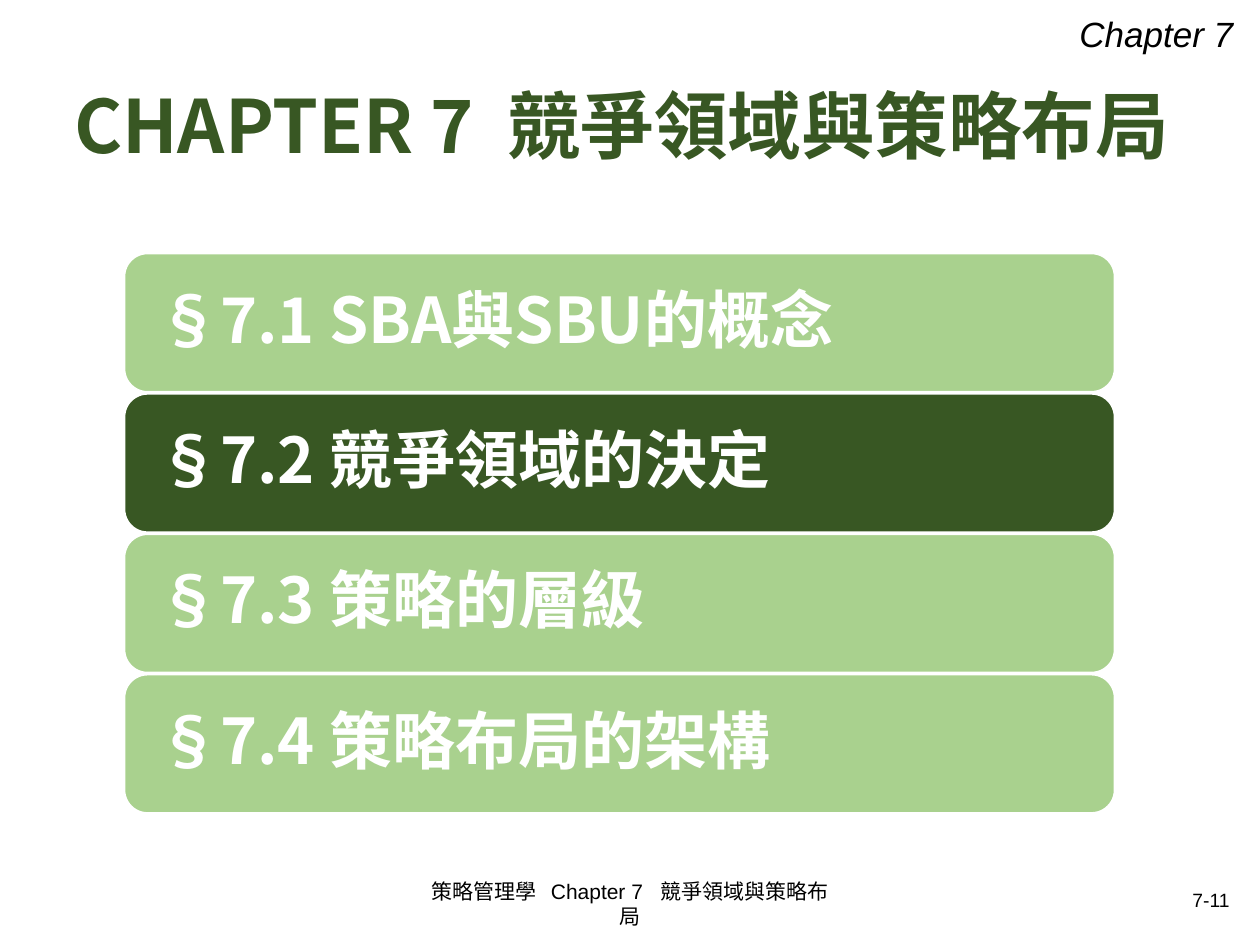
from dataclasses import dataclass

from lxml import etree
from pptx import Presentation
from pptx.dml.color import RGBColor
from pptx.enum.shapes import MSO_SHAPE
from pptx.enum.text import MSO_ANCHOR, MSO_AUTO_SIZE, PP_ALIGN
from pptx.oxml.ns import qn
from pptx.util import Cm, Pt

ROUND = MSO_SHAPE.ROUNDED_RECTANGLE
MID, TOP = MSO_ANCHOR.MIDDLE, MSO_ANCHOR.TOP
LEFT, CENTER, RIGHT = PP_ALIGN.LEFT, PP_ALIGN.CENTER, PP_ALIGN.RIGHT
FIXED, GROW = MSO_AUTO_SIZE.NONE, MSO_AUTO_SIZE.SHAPE_TO_FIT_TEXT


@dataclass(frozen=True)
class Theme:
    dark: RGBColor = RGBColor(0x38, 0x57, 0x23)
    light: RGBColor = RGBColor(0xA9, 0xD1, 0x8E)
    white: RGBColor = RGBColor(0xFF, 0xFF, 0xFF)
    black: RGBColor = RGBColor(0, 0, 0)
    head: str = "Noto Sans CJK SC"
    body: str = "Arial"
    title: int = 42
    item: int = 36
    mark: int = 20
    foot: int = 12
    page: int = 11


THEME = Theme()
TOPICS = ["§7.1 SBA與SBU的概念", "§7.2 競爭領域的決定",
          "§7.3 策略的層級", "§7.4 策略布局的架構"]
ACTIVE = 1


def write(frame, text, size, color, align=LEFT, italic=False):
    para = frame.paragraphs[0]
    para.alignment = align
    run = para.add_run()
    run.text = text
    font = run.font
    font.name, font.size, font.italic = THEME.body, Pt(size), italic
    font.color.rgb = color
    return para, run


def write_head(frame, text, size, color):
    """Bold heading text, with the heading font for Chinese as well."""
    para, run = write(frame, text, size, color)
    para.line_spacing = 0.9
    run.font.bold = True
    run.font.name = THEME.head
    east = etree.SubElement(run.font._element, qn("a:ea"))
    east.set("typeface", THEME.head)


def add_title(slide, text):
    title = slide.shapes.title
    title.left, title.top = Cm(1.24), Cm(1.57)
    title.width, title.height = Cm(22.91), Cm(2.08)
    frame = title.text_frame
    frame.auto_size, frame.vertical_anchor = FIXED, MID
    write_head(frame, text, THEME.title, THEME.dark)


def add_bar(slide, top, text, fill):
    bar = slide.shapes.add_shape(ROUND, Cm(2.51), top, Cm(19.96), Cm(2.79))
    bar.shadow.inherit = False
    bar.fill.solid()
    bar.fill.fore_color.rgb = fill
    bar.line.color.rgb = THEME.white
    bar.line.width = Pt(1)
    frame = bar.text_frame
    frame.word_wrap, frame.vertical_anchor = True, MID
    frame.margin_left = frame.margin_right = Cm(0.52)
    write_head(frame, text, THEME.item, THEME.white)


def add_note(slide, box, text, size, align, anchor=MID, wrap=True,
             italic=False):
    note = slide.shapes.add_textbox(*(Cm(n) for n in box))
    frame = note.text_frame
    frame.word_wrap, frame.vertical_anchor = wrap, anchor
    frame.auto_size = FIXED if wrap else GROW
    write(frame, text, size, THEME.black, align, italic)


def main():
    deck = Presentation()
    deck.slide_width, deck.slide_height = Cm(25.4), Cm(19.05)
    slide = deck.slides.add_slide(deck.slide_layouts[5])

    # Footer and page number
    add_note(slide, (8.41, 17.7, 8.59, 1.02),
             "策略管理學   Chapter 7   競爭領域與策略布局", THEME.foot, CENTER)
    add_note(slide, (17.93, 17.75, 7.11, 0.76), "7-11", THEME.page, RIGHT)

    # Title and chapter mark
    add_title(slide, "CHAPTER 7  競爭領域與策略布局")
    add_note(slide, (21.51, 0.13, 3.63, 1.12), "Chapter 7", THEME.mark, LEFT,
             anchor=TOP, wrap=False, italic=True)

    # Section bars, the current one dark
    for i, topic in enumerate(TOPICS):
        fill = THEME.dark if i == ACTIVE else THEME.light
        add_bar(slide, Cm(5.11 + i * 2.83), topic, fill)

    deck.save("out.pptx")


if __name__ == "__main__":
    main()
